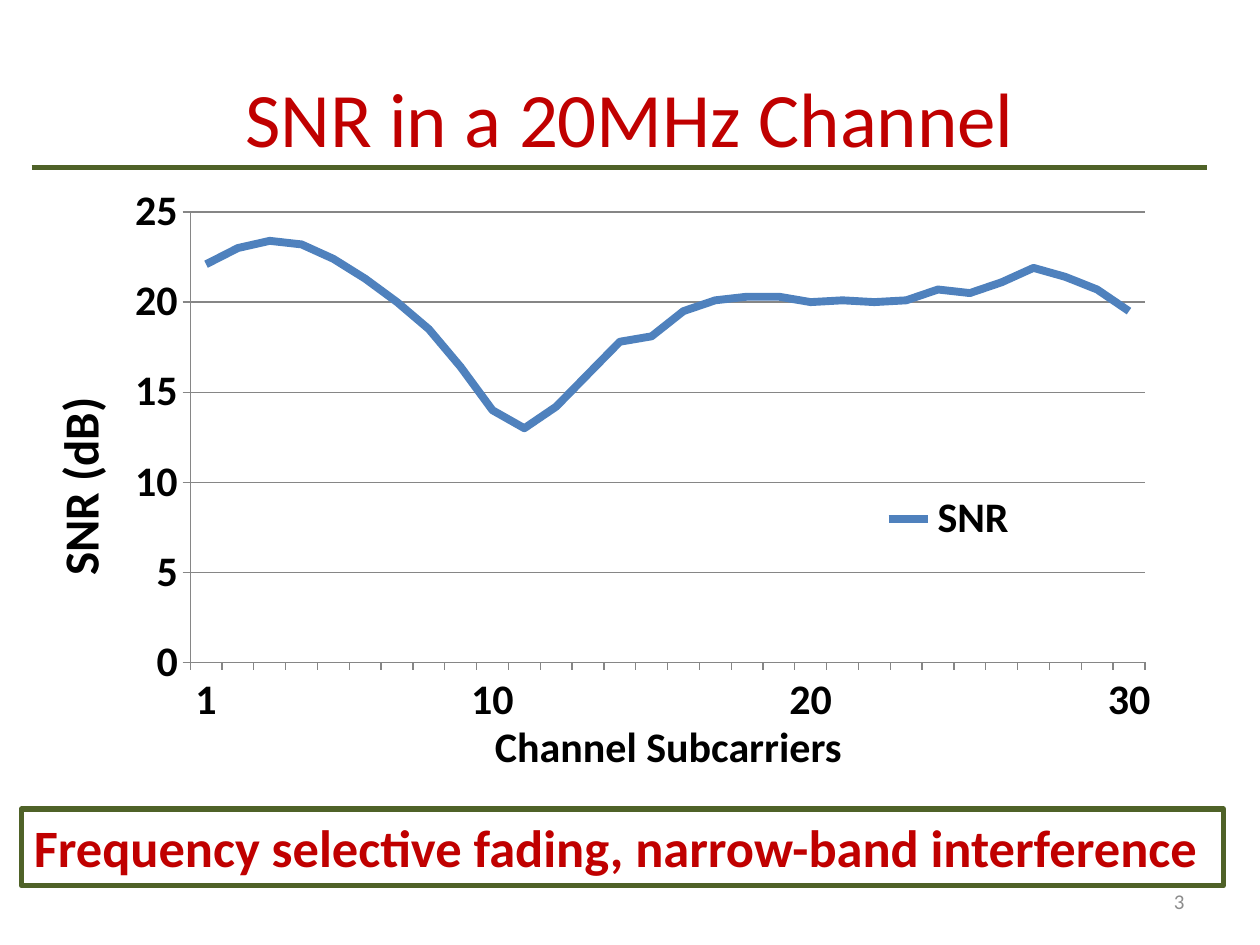
from lxml import etree
from pptx import Presentation, util as u
from pptx.chart.data import CategoryChartData
from pptx.dml.color import RGBColor
from pptx.enum import chart as ch, shapes, text
from pptx.oxml.ns import qn

COLORS = {"red": "C00000", "green": "4F6228", "blue": "4F81BD",
          "black": "000000", "gray": "8C8C8C", "grid": "868686"}
FONT = "Calibri"
SNR_VALUES = [22.1, 23, 23.4, 23.2, 22.4, 21.3, 20, 18.5, 16.4, 14,
              13, 14.2, 16, 17.8, 18.1, 19.5, 20.1, 20.3, 20.3, 20,
              20.1, 20, 20.1, 20.7, 20.5, 21.1, 21.9, 21.4, 20.7, 19.5]


class SlideBuilder:
    """Holds the style and the current slide, and adds each kind of element."""

    def __init__(self, slide):
        self.slide = slide

    def color(self, name):
        return RGBColor.from_string(COLORS[name])

    def box(self, *lengths):
        return [u.Inches(length) for length in lengths]

    def style(self, font, size, color, bold=False):
        font.name, font.size, font.bold = FONT, u.Pt(size), bold
        font.color.rgb = self.color(color)

    def stroke(self, line, color, width):
        line.color.rgb = self.color(color)
        line.width = u.Pt(width)

    def add_words(self, frame, words, size, color, bold=False, align="LEFT", anchor="TOP", wrap=True):
        frame.word_wrap = wrap
        frame.vertical_anchor = text.MSO_ANCHOR[anchor]
        paragraph = frame.paragraphs[0]
        paragraph.alignment = text.PP_ALIGN[align]
        run = paragraph.add_run()
        run.text = words
        self.style(run.font, size, color, bold)

    def title(self, words, *place):
        heading = self.slide.shapes.title
        heading.left, heading.top, heading.width, heading.height = self.box(*place)
        self.add_words(heading.text_frame, words, 44, "red", align="CENTER", anchor="MIDDLE")

    def rule(self, *ends):
        rule = self.slide.shapes.add_connector(shapes.MSO_CONNECTOR.STRAIGHT, *self.box(*ends))
        self.stroke(rule.line, "green", 3)
        etree.SubElement(rule._element.spPr, qn("a:effectLst"))

    def label(self, words, place, size, color="black", rotation=0, **options):
        label = self.slide.shapes.add_textbox(*self.box(*place))
        label.rotation = rotation
        self.add_words(label.text_frame, words, size, color, **options)

    def callout(self, words, *place):
        callout = self.slide.shapes.add_shape(shapes.MSO_SHAPE.RECTANGLE, *self.box(*place))
        callout.shadow.inherit = False
        callout.fill.background()
        self.stroke(callout.line, "green", 3)
        self.add_words(callout.text_frame, words, 30, "red", bold=True, wrap=False)

    def layout(self, parent, index, **parts):
        for old in parent.findall(qn("c:layout")):
            parent.remove(old)
        layout = etree.Element(qn("c:layout"))
        manual = etree.SubElement(layout, qn("c:manualLayout"))
        for tag, value in parts.items():
            etree.SubElement(manual, qn("c:" + tag)).set("val", str(value))
        parent.insert(index, layout)

    def axis(self, axis):
        axis.major_tick_mark = ch.XL_TICK_MARK.OUTSIDE
        axis.minor_tick_mark = ch.XL_TICK_MARK.NONE
        self.style(axis.tick_labels.font, 24, "black", True)
        self.stroke(axis.format.line, "grid", 0.75)

    def line_chart(self, name, categories, values, *place):
        data = CategoryChartData()
        data.categories = categories
        data.add_series(name, values)
        chart = self.slide.shapes.add_chart(
            ch.XL_CHART_TYPE.LINE, *self.box(*place), data).chart
        chart.has_title = False
        self.style(chart.font, 18, "black")
        chart.plots[0].vary_by_categories = False

        series = chart.plots[0].series[0]
        series.smooth = False
        series.marker.style = ch.XL_MARKER_STYLE.NONE
        self.stroke(series.format.line, "blue", 4.5)

        carriers, level = chart.category_axis, chart.value_axis
        self.axis(carriers)
        self.axis(level)
        carriers.has_major_gridlines = False
        skip = etree.Element(qn("c:tickLblSkip"), val="1")
        carriers._element.find(qn("c:noMultiLvlLbl")).addprevious(skip)
        level.minimum_scale, level.maximum_scale, level.major_unit = 0, 25, 5
        level.has_major_gridlines = True
        self.stroke(level.major_gridlines.format.line, "grid", 0.75)

        chart.has_legend = True
        legend = chart.legend
        legend.position = ch.XL_LEGEND_POSITION.RIGHT
        legend.include_in_layout = True
        self.style(legend.font, 24, "black", True)
        self.layout(legend._element, 1, xMode="edge", yMode="edge",
                    x=0.71, y=0.55, w=0.15, h=0.13)
        self.layout(chart._chartSpace.chart.plotArea, 0, layoutTarget="inner",
                    xMode="edge", yMode="edge", x=0.07, y=0.07, w=0.9, h=0.8)


def main():
    deck = Presentation()
    deck.slide_width, deck.slide_height = u.Inches(10), u.Inches(7.5)
    page = SlideBuilder(deck.slides.add_slide(deck.slide_layouts[5]))
    page.title("SNR in a 20MHz Channel", 0.5, 0.3, 9, 1.25)
    page.rule(0.25, 1.33, 9.58, 1.33)
    page.callout("Frequency selective fading, narrow-band interference", 0.17, 6.42, 9.54, 0.61)
    page.label("3", (7.17, 6.95, 2.33, 0.4), 12, "gray", align="RIGHT", anchor="MIDDLE")
    carriers = [str(n) if n == 1 or n % 10 == 0 else ""
                for n in range(1, len(SNR_VALUES) + 1)]
    page.line_chart("SNR", carriers, SNR_VALUES, 0.92, 1.37, 8.42, 4.47)
    page.label("SNR (dB)", (-0.37, 3.38, 2, 0.57), 28, rotation=270, bold=True)
    page.label("Channel Subcarriers", (3.83, 5.67, 4.67, 0.5), 24, bold=True)
    deck.save("out.pptx")


if __name__ == "__main__":
    main()
